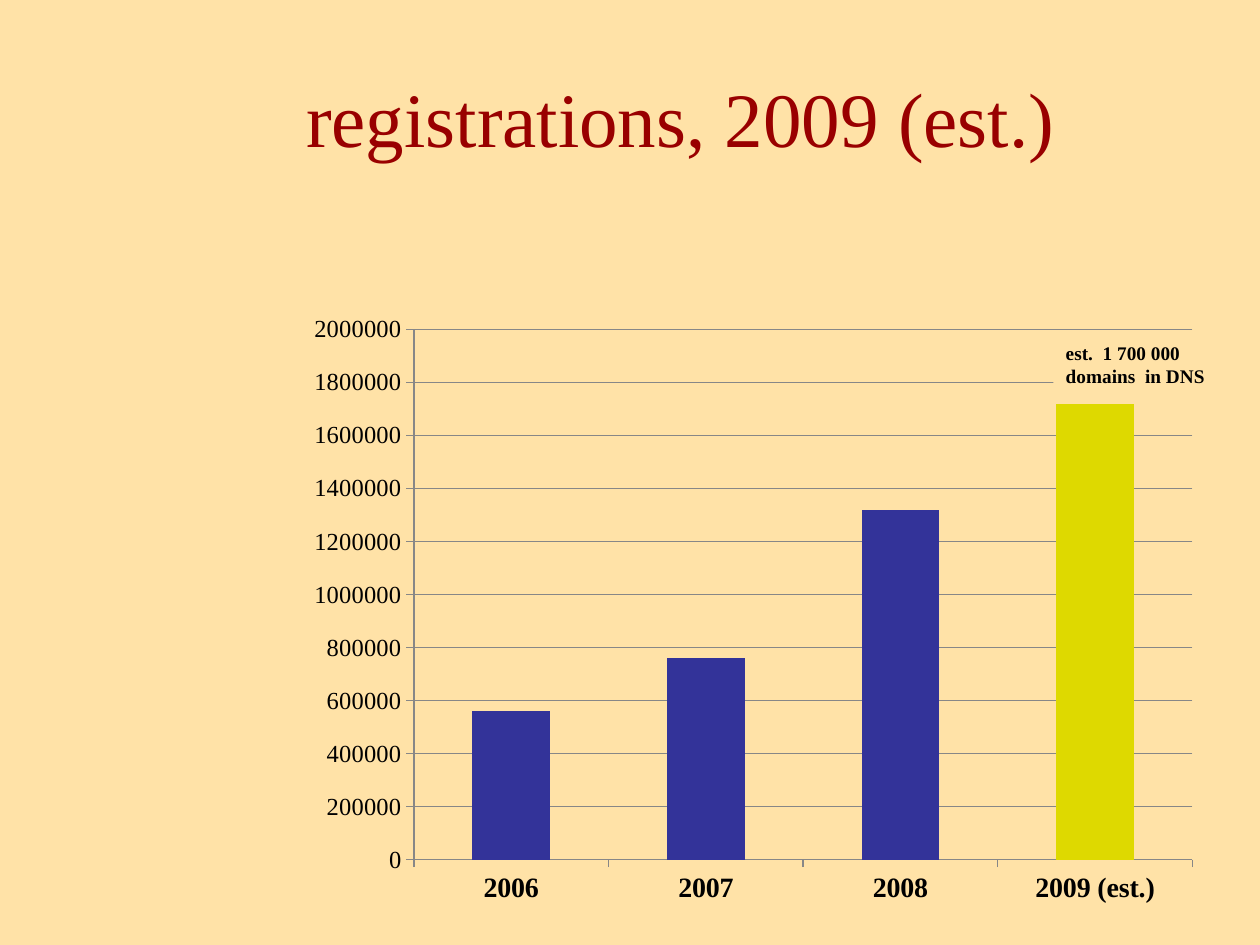
from pptx import Presentation
from pptx.chart.data import CategoryChartData
from pptx.dml.color import RGBColor
from pptx.enum.chart import XL_CHART_TYPE, XL_TICK_MARK
from pptx.enum.shapes import MSO_SHAPE
from pptx.enum.text import MSO_ANCHOR, PP_ALIGN
from pptx.oxml import parse_xml
from pptx.oxml.ns import nsdecls
from pptx.util import Inches, Pt

COLUMN = XL_CHART_TYPE.COLUMN_CLUSTERED
OUTSIDE = XL_TICK_MARK.OUTSIDE
RECT = MSO_SHAPE.RECTANGLE
TOP, MIDDLE = MSO_ANCHOR.TOP, MSO_ANCHOR.MIDDLE
LEFT = PP_ALIGN.LEFT

TITLE = "registrations, 2009 (est.)"
NOTE = "est.  1 700 000 domains  in DNS"
YEARS = ["2006", "2007", "2008", "2009 (est.)"]
COUNTS = [560000, 760000, 1320000, 1720000]

THEME = {
    "font": "Times New Roman",
    "back": "FFE2A7", "title": "990000", "text": "000000",
    "bar": "333399", "last": "DED900", "grid": "878787",
    "title_size": 44, "years_size": 16, "counts_size": 14, "note_size": 11,
}
BOXES = {
    "title": (2.33, 0.3, 7.42, 1.25),
    "chart": (2.34, 2.42, 7.27, 4.84),
    "note": (8.36, 2.66, 1.41, 0.39),
}
PLOT = {"x": 0.13, "y": 0.04, "w": 0.85, "h": 0.87}


def color(name):
    return RGBColor.from_string(THEME[name])


def box(name):
    return [Inches(n) for n in BOXES[name]]


def paint(fill, name):
    fill.solid()
    fill.fore_color.rgb = color(name)


def style(font, size, tint="text", bold=False):
    font.name = THEME["font"]
    font.size = Pt(THEME[size])
    font.color.rgb = color(tint)
    font.bold = bold


def rule(line):
    line.color.rgb = color("grid")
    line.width = Pt(0.75)


def write(shape, text, size, tint, bold, anchor):
    frame = shape.text_frame
    frame.text = text
    frame.word_wrap = True
    frame.vertical_anchor = anchor
    part = frame.paragraphs[0]
    part.alignment = LEFT
    style(part.runs[0].font, size, tint, bold)


def add_title(slide):
    title = slide.shapes.title
    title.left, title.top, title.width, title.height = box("title")
    write(title, TITLE, "title_size", "title", False, MIDDLE)


def add_bars(slide):
    data = CategoryChartData()
    data.categories = YEARS
    data.add_series("Series 1", COUNTS)
    chart = slide.shapes.add_chart(COLUMN, *box("chart"), data).chart
    chart.has_legend = False
    chart.has_title = False
    style(chart.font, "counts_size")

    plot = chart.plots[0]
    plot.vary_by_categories = False
    plot.gap_width = 150
    bars = plot.series[0]
    paint(bars.format.fill, "bar")
    paint(bars.points[len(YEARS) - 1].format.fill, "last")

    years, counts = chart.category_axis, chart.value_axis
    for axis in (years, counts):
        axis.major_tick_mark = OUTSIDE
        rule(axis.format.line)
    style(years.tick_labels.font, "years_size", bold=True)
    style(counts.tick_labels.font, "counts_size")
    counts.minimum_scale = 0
    counts.maximum_scale = 2000000
    counts.major_unit = 200000
    counts.has_major_gridlines = True
    rule(counts.major_gridlines.format.line)
    counts.tick_labels.number_format = "0"
    counts.tick_labels.number_format_is_linked = False

    modes = "".join(f'<c:{k}Mode val="edge"/>' for k in "xy")
    sizes = "".join(f'<c:{k} val="{v}"/>' for k, v in PLOT.items())
    area = chart._chartSpace.chart.plotArea
    for old in area.findall("{*}layout"):
        area.remove(old)
    area.insert(0, parse_xml(
        f'<c:layout {nsdecls("c")}><c:manualLayout>'
        f'<c:layoutTarget val="inner"/>{modes}{sizes}'
        '</c:manualLayout></c:layout>'))


def add_note(slide):
    note = slide.shapes.add_shape(RECT, *box("note"))
    note.shadow.inherit = False
    paint(note.fill, "back")
    note.line.fill.background()
    write(note, NOTE, "note_size", "text", True, TOP)


def main():
    deck = Presentation()
    deck.slide_width, deck.slide_height = Inches(10), Inches(7.5)
    slide = deck.slides.add_slide(deck.slide_layouts[5])
    paint(slide.background.fill, "back")
    add_title(slide)
    add_bars(slide)
    add_note(slide)
    deck.save("out.pptx")


if __name__ == "__main__":
    main()
